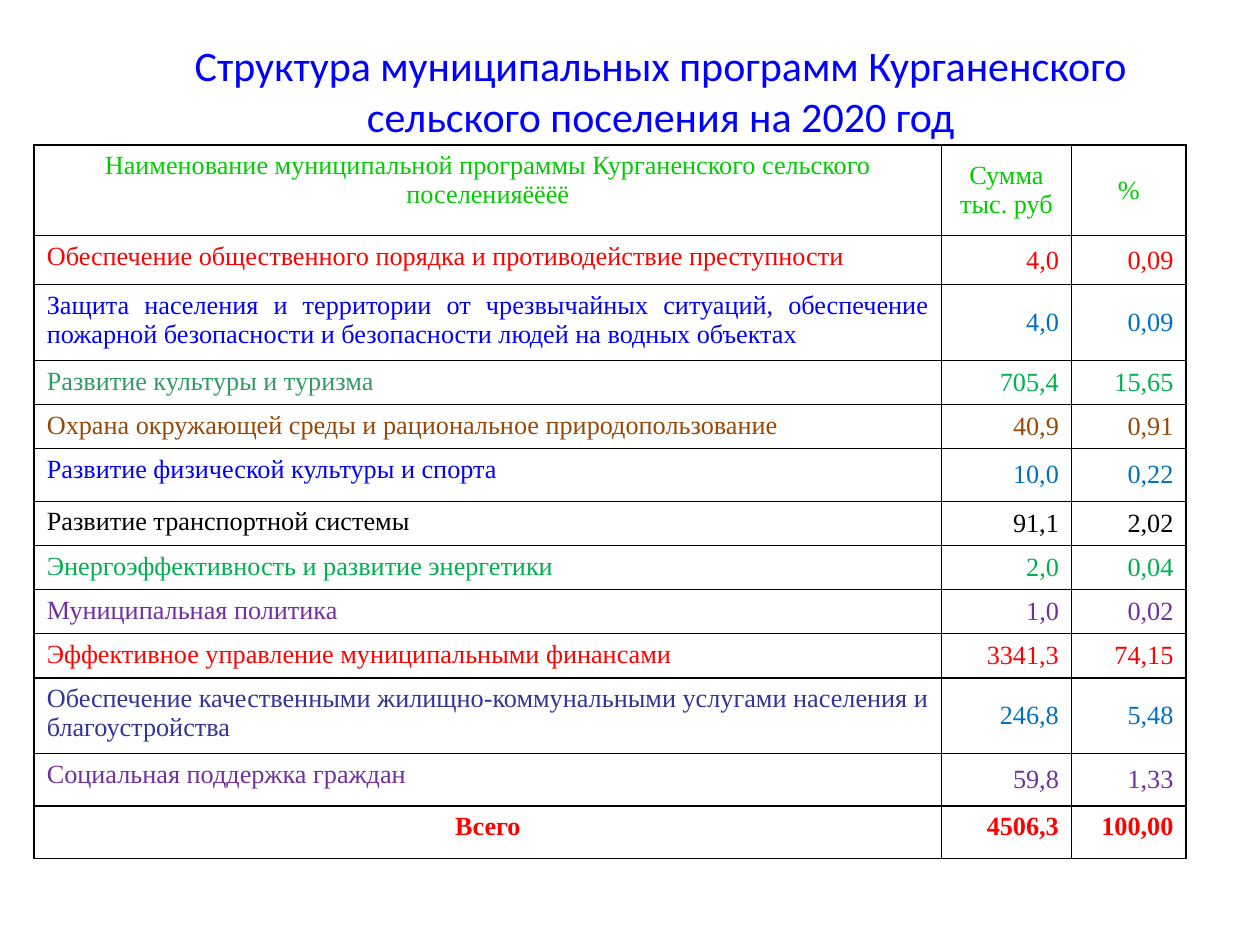
from lxml.etree import SubElement
from pptx import Presentation
from pptx.dml.color import RGBColor
from pptx.enum.text import MSO_ANCHOR, PP_ALIGN
from pptx.oxml.ns import qn
from pptx.util import Cm, Pt

GREEN, RED, BLUE, AZURE = "00CC00", "FF0000", "0000FF", "0070C0"
EMERALD, PURPLE, BROWN, BLACK = "00B050", "7030A0", "984807", "000000"
TITLE = "Структура муниципальных программ Курганенского сельского поселения на 2020 год"
HEADER = ("Наименование муниципальной программы Курганенского сельского поселенияёёёё",
          "Сумма тыс. руб", "%")
PROGRAMS = [
    ("Обеспечение общественного порядка и противодействие преступности",
     "4,0", "0,09", RED, RED, 0.99),
    ("Защита населения и территории от чрезвычайных ситуаций, обеспечение "
     "пожарной безопасности и безопасности людей на водных объектах",
     "4,0", "0,09", BLUE, AZURE, 0.71),
    ("Развитие культуры и туризма", "705,4", "15,65", "339966", EMERALD, 0.71),
    ("Охрана окружающей среды и рациональное природопользование",
     "40,9", "0,91", BROWN, BROWN, 0.79),
    ("Развитие физической культуры и спорта", "10,0", "0,22", BLUE, AZURE, 1.06),
    ("Развитие транспортной системы", "91,1", "2,02", BLACK, BLACK, 0.52),
    ("Энергоэффективность и развитие энергетики",
     "2,0", "0,04", EMERALD, EMERALD, 0.53),
    ("Муниципальная политика", "1,0", "0,02", PURPLE, PURPLE, 0.53),
    ("Эффективное управление муниципальными финансами",
     "3341,3", "74,15", RED, RED, 0.74),
    ("Обеспечение качественными жилищно-коммунальными услугами населения "
     "и благоустройства", "246,8", "5,48", "333399", AZURE, 0.74),
    ("Социальная поддержка граждан", "59,8", "1,33", PURPLE, PURPLE, 1.06),
]
TOTAL = ("Всего", "4506,3", "100,00")
COLUMNS = (18.29, 2.62, 2.31)


def color(code):
    """Turn a hex string into a colour."""
    return RGBColor.from_string(code)


class Builder:
    """Hold the style and the current page, and add elements to it."""

    title_font = {"name": "Calibri", "size": Pt(24), "bold": False}
    table_font = {"name": "Times New Roman", "size": Pt(15), "bold": False}

    def __init__(self, deck):
        """Start a blank page."""
        self.page = deck.slides.add_slide(deck.slide_layouts[6])

    def text(self, frame, words, style, code, align):
        """Put one formatted paragraph into a text frame."""
        para = frame.paragraphs[0]
        para.alignment = align
        span = para.add_run()
        span.text = words
        for name, value in style.items():
            setattr(span.font, name, value)
        span.font.color.rgb = color(code)

    def title(self, words, left, top, width, height):
        """Add the centred heading."""
        box = self.page.shapes.add_textbox(Cm(left), Cm(top), Cm(width), Cm(height))
        box.text_frame.word_wrap = True
        box.text_frame.vertical_anchor = MSO_ANCHOR.MIDDLE
        self.text(box.text_frame, words, self.title_font, BLUE, PP_ALIGN.CENTER)

    def table(self, left, top, widths, heights):
        """Add a table without a banded style."""
        frame = self.page.shapes.add_table(
            len(heights), len(widths), Cm(left), Cm(top),
            Cm(sum(widths)), Cm(sum(heights)))
        table = frame.table
        table.first_row = table.horz_banding = False
        for column, width in zip(table.columns, widths):
            column.width = Cm(width)
        for row, height in zip(table.rows, heights):
            row.height = Cm(height)
        return table

    def cell(self, cell, words, code, align, anchor, bold=False):
        """Fill one cell with text and draw its borders."""
        cell.vertical_anchor = anchor
        self.text(cell.text_frame, words, {**self.table_font, "bold": bold}, code, align)
        properties = cell._tc.get_or_add_tcPr()
        for side in ("lnL", "lnR", "lnT", "lnB"):
            line = SubElement(properties, qn(f"a:{side}"), w=str(Pt(1)))
            SubElement(SubElement(line, qn("a:solidFill")), qn("a:srgbClr"), val=BLACK)
        cell.fill.background()


def main():
    """Build the slide with the programme table."""
    deck = Presentation()
    deck.slide_width, deck.slide_height = Cm(25.4), Cm(19.05)
    builder = Builder(deck)
    builder.title(TITLE, 2.54, 0.71, 21.56, 2.21)
    heights = [1.83, *(program[-1] for program in PROGRAMS), 1.06]
    table = builder.table(0.69, 2.92, COLUMNS, heights)
    top, middle = MSO_ANCHOR.TOP, MSO_ANCHOR.MIDDLE
    center, right = PP_ALIGN.CENTER, PP_ALIGN.RIGHT
    last = len(heights) - 1

    for index, words in enumerate(HEADER):
        builder.cell(table.cell(0, index), words, GREEN, center, middle if index else top)
    for row, (name, amount, share, name_color, value_color, _) in enumerate(PROGRAMS, 1):
        builder.cell(table.cell(row, 0), name, name_color, PP_ALIGN.JUSTIFY, top)
        for index, words in enumerate((amount, share), 1):
            builder.cell(table.cell(row, index), words, value_color, right, middle)
    for index, words in enumerate(TOTAL):
        builder.cell(table.cell(last, index), words, RED, right if index else center, top, True)
    deck.save("out.pptx")


if __name__ == "__main__":
    main()
